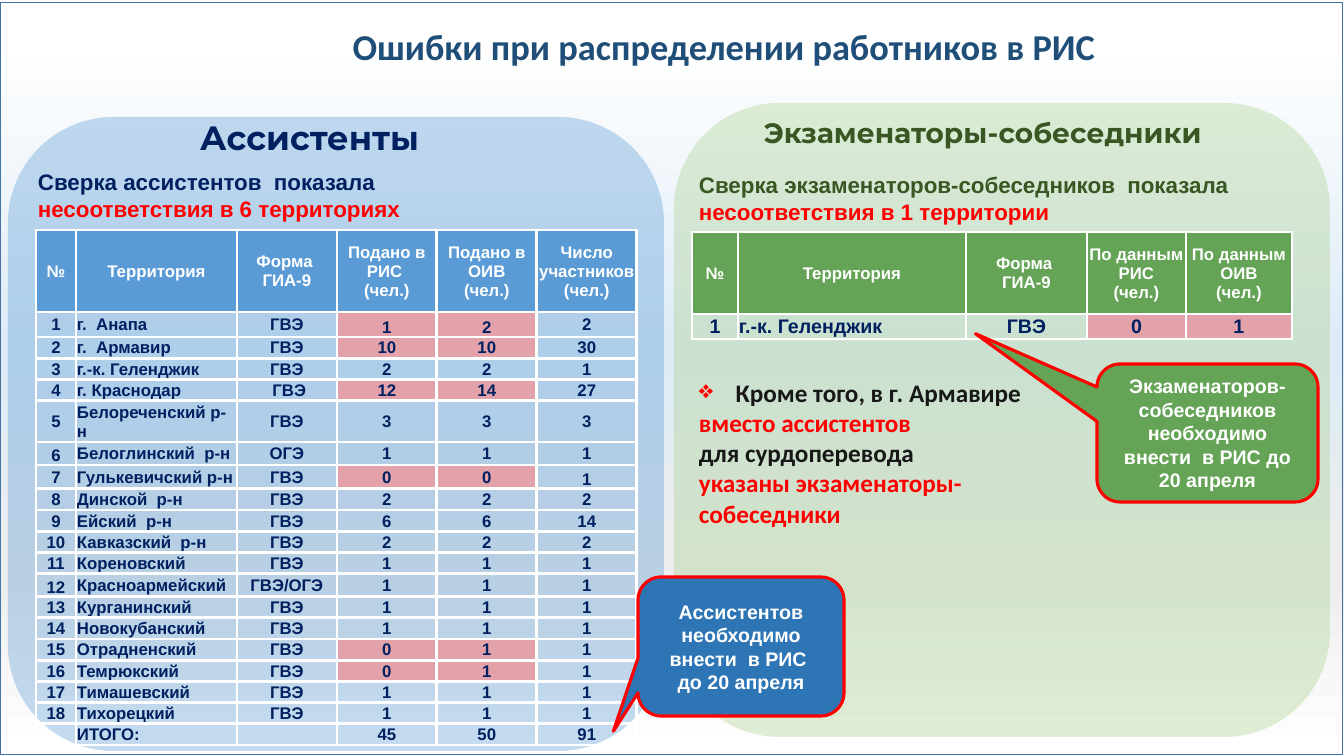
from lxml import etree
from pptx import Presentation
from pptx.dml.color import RGBColor
from pptx.enum.shapes import MSO_SHAPE
from pptx.enum.text import MSO_ANCHOR, PP_ALIGN
from pptx.oxml.ns import qn
from pptx.util import Emu, Pt

RECT, ROUND = MSO_SHAPE.RECTANGLE, MSO_SHAPE.ROUNDED_RECTANGLE
CALLOUT = MSO_SHAPE.ROUNDED_RECTANGULAR_CALLOUT
TOP, MIDDLE, BOTTOM = MSO_ANCHOR.TOP, MSO_ANCHOR.MIDDLE, MSO_ANCHOR.BOTTOM
LEFT, CENTER = PP_ALIGN.LEFT, PP_ALIGN.CENTER

WHITE = RGBColor(0xFF, 0xFF, 0xFF)
RED = RGBColor(0xFF, 0x00, 0x00)
PINK = RGBColor(0xE3, 0xA1, 0xA9)
NAVY = RGBColor(0x00, 0x20, 0x60)
TITLE_BLUE = RGBColor(0x1F, 0x4E, 0x79)
FRAME_BLUE = RGBColor(0x43, 0x73, 0x9E)
SKY = RGBColor(0x5B, 0x9B, 0xD5)
BLUE = RGBColor(0x2E, 0x75, 0xB6)
PALE_BLUE = RGBColor(0xDE, 0xEB, 0xF6)
PALE_GRAY = RGBColor(0xED, 0xED, 0xED)
LIGHT_GREEN = RGBColor(0xA9, 0xD1, 0x8E)
GREEN = RGBColor(0x65, 0xA4, 0x56)
DARK_GREEN = RGBColor(0x38, 0x57, 0x23)
BLACK = RGBColor(0x18, 0x17, 0x17)

BACKDROP = [(5, WHITE), (46, PALE_BLUE), (76, PALE_GRAY), (100, WHITE)]

ASSISTANTS = [
    ("№", "Территория", "Форма \nГИА-9", "Подано в РИС \n(чел.)", "Подано в ОИВ\n(чел.)",
     "Число участников\n(чел.)"),
    ("1", "г.  Анапа", "ГВЭ", "1", "2", "2"),
    ("2", "г.  Армавир", "ГВЭ", "10", "10", "30"),
    ("3", "г.-к. Геленджик", "ГВЭ", "2", "2", "1"),
    ("4", "г. Краснодар", " ГВЭ", "12", "14", "27"),
    ("5", "Белореченский р-н", "ГВЭ", "3", "3", "3"),
    ("6", "Белоглинский  р-н", "ОГЭ", "1", "1", "1"),
    ("7", "Гулькевичский р-н", "ГВЭ", "0", "0", "1"),
    ("8", "Динской  р-н", "ГВЭ", "2", "2", "2"),
    ("9", "Ейский  р-н", "ГВЭ", "6", "6", "14"),
    ("10", "Кавказский  р-н", "ГВЭ", "2", "2", "2"),
    ("11", "Кореновский", "ГВЭ", "1", "1", "1"),
    ("12", "Красноармейский", "ГВЭ/ОГЭ", "1", "1", "1"),
    ("13", "Курганинский", "ГВЭ", "1", "1", "1"),
    ("14", "Новокубанский", "ГВЭ", "1", "1", "1"),
    ("15", "Отрадненский", "ГВЭ", "0", "1", "1"),
    ("16", "Темрюкский", "ГВЭ", "0", "1", "1"),
    ("17", "Тимашевский", "ГВЭ", "1", "1", "1"),
    ("18", "Тихорецкий", "ГВЭ", "1", "1", "1"),
    ("", "ИТОГО:", "", "45", "50", "91"),
]
ASSISTANT_ROWS = [82, 25] + [21] * 4 + [23, 24] + [21] * 4 + [23] + [21] * 7
EXAMINERS = [
    ("№", "Территория", "Форма \nГИА-9", "По данным  РИС \n(чел.)", "По данным ОИВ\n(чел.)"),
    ("1", "г.-к. Геленджик", "ГВЭ", "0", "1"),
]
RESULT_COLUMNS = (3, 4)


def px(n):
    return Emu(round(n * 914400 / 100.8))


class Board:
    """Draws styled elements on one slide, with lengths in px."""

    def __init__(self, prs):
        self.s = prs.slides.add_slide(prs.slide_layouts[6])
        self.font = "Arial"

    def sub(self, parent, tag, **attrs):
        return etree.SubElement(parent, qn(tag), attrs)

    def backdrop(self, stops):
        fill = self.s.background.fill
        fill.gradient()
        fill.gradient_angle = 270
        gs_lst = next(self.s.element.iter(qn("a:gsLst")))
        for gs in list(gs_lst):
            gs_lst.remove(gs)
        for pos, color in stops:
            gs = self.sub(gs_lst, "a:gs", pos=str(pos * 1000))
            self.sub(gs, "a:srgbClr", val=str(color))

    def style(self, p, size, color, font=None, align=LEFT):
        p.alignment = align
        p.font.size, p.font.bold, p.font.name = Pt(size), True, font or self.font
        p.font.color.rgb = color

    def put_text(self, tf, paras, size, font=None, align=LEFT, bullet=None):
        for i, runs in enumerate(paras):
            p = tf.paragraphs[0] if i == 0 else tf.add_paragraph()
            if bullet and i == 0:
                ppr = p._p.get_or_add_pPr()
                ppr.set("marL", str(px(31)))
                ppr.set("indent", str(px(-31)))
                self.sub(ppr, "a:buChar", char=bullet)
            self.style(p, size, runs[0][1], font, align)
            for text, color in runs:
                r = p.add_run()
                r.text = text
                if len(runs) > 1:
                    r.font.color.rgb = color

    def shape(self, kind, x, y, w, h, fill=None, alpha=None, line=None, weight=0):
        sp = self.s.shapes.add_shape(kind, px(x), px(y), px(w), px(h))
        sp.shadow.inherit = False
        if fill is None:
            sp.fill.background()
        else:
            sp.fill.solid()
            sp.fill.fore_color.rgb = fill
        if alpha:
            clr = next(sp.element.spPr.iter(qn("a:srgbClr")))
            self.sub(clr, "a:alpha", val=str(alpha * 1000))
        if line is None:
            sp.line.fill.background()
        else:
            sp.line.color.rgb = line
            sp.line.width = Pt(weight)
        return sp

    def callout(self, x, y, w, h, fill, tip, lines):
        sp = self.shape(CALLOUT, x, y, w, h, fill, line=RED, weight=2.25)
        sp.adjustments[0], sp.adjustments[1] = tip
        tf = sp.text_frame
        tf.word_wrap, tf.vertical_anchor = True, MIDDLE
        self.put_text(tf, [[(text, WHITE)] for text in lines], 14, align=CENTER)

    def text(self, x, y, w, h, paras, size, wrap=True, anchor=TOP, **style):
        tf = self.s.shapes.add_textbox(px(x), px(y), px(w), px(h)).text_frame
        tf.word_wrap, tf.vertical_anchor = wrap, anchor
        self.put_text(tf, paras, size, **style)

    def border(self, cell, weight):
        tcpr = cell._tc.get_or_add_tcPr()
        for side in ("a:lnL", "a:lnR", "a:lnT", "a:lnB"):
            ln = self.sub(tcpr, side, w=str(Pt(weight)))
            self.sub(self.sub(ln, "a:solidFill"), "a:srgbClr", val=str(WHITE))

    def table(self, x, y, cols, rows, data, head, weight, size, marked, low=()):
        frame = self.s.shapes.add_table(len(rows), len(cols), px(x), px(y),
                                        px(sum(cols)), px(sum(rows)))
        tbl = frame.table
        tbl.first_row = tbl.horz_banding = False
        for column, w in zip(tbl.columns, cols):
            column.width = px(w)
        for i, h in enumerate(rows):
            tbl.rows[i].height = px(h)
            for j, text in enumerate(data[i]):
                cell = tbl.cell(i, j)
                cell.margin_left = cell.margin_right = cell.margin_top = px(1)
                cell.margin_bottom = 0
                cell.vertical_anchor = BOTTOM if (i, j) in low else MIDDLE
                self.border(cell, weight)
                fill = head if i == 0 else PINK if i in marked and j in RESULT_COLUMNS else None
                if fill is None:
                    cell.fill.background()
                else:
                    cell.fill.solid()
                    cell.fill.fore_color.rgb = fill
                cell.text = text
                for p in cell.text_frame.paragraphs:
                    self.style(p, size if i else 12, NAVY if i else WHITE,
                               align=LEFT if i and j == 1 else CENTER)
                    if not text:
                        self.sub(p._p, "a:endParaRPr", sz=str(size * 100))


def main():
    prs = Presentation()
    prs.slide_width, prs.slide_height = px(1344), px(756)
    b = Board(prs)
    b.backdrop(BACKDROP)
    b.shape(RECT, 0, 2, 1342, 752, line=FRAME_BLUE, weight=0.25)
    b.shape(ROUND, 674, 103, 656, 634, LIGHT_GREEN, alpha=36)
    b.shape(ROUND, 8, 117, 656, 634, SKY, alpha=36)
    b.text(132, 0, 1185, 92, [[("Ошибки при распределении работников в РИС", TITLE_BLUE)]],
           26, anchor=MIDDLE, font="Calibri", align=CENTER)
    b.text(28, 163, 413, 65, [[("Сверка ассистентов  показала", NAVY)],
                              [("несоответствия в 6 территориях", RED)]], 16, wrap=False)
    b.table(36, 230, [40, 161, 100, 100, 100, 100], ASSISTANT_ROWS, ASSISTANTS, SKY, 2.25, 12,
            marked=(1, 2, 4, 7, 15, 16), low=((1, 3), (1, 4), (6, 0), (7, 5), (12, 0)))
    b.callout(638, 577, 206, 139, BLUE, (-0.62, 0.61),
              ["Ассистентов необходимо внести  в РИС ", "до 20 апреля"])
    b.text(689, 166, 607, 65, [[("Сверка экзаменаторов-собеседников  показала ", DARK_GREEN),
                                ("несоответствия в 1 территории", RED)]], 16)
    b.table(692, 232, [46, 228, 121, 99, 106], [82, 25], EXAMINERS, GREEN, 1, 14, marked=(1,))
    b.callout(1097, 364, 221, 138, GREEN, (-1.05, -0.72),
              ["Экзаменаторов-собеседников необходимо внести  в РИС до 20 апреля"])
    b.text(190, 112, 251, 50, [[("Ассистенты", NAVY)]], 24, wrap=False, font="Montserrat")
    b.text(754, 111, 497, 44, [[("Экзаменаторы-собеседники", DARK_GREEN)]], 20, wrap=False,
           font="Montserrat")
    b.text(689, 372, 422, 163, [[(" ", RED), ("Кроме того, в г. Армавире", BLACK)],
                                [("вместо ассистентов", RED)],
                                [("для сурдоперевода", BLACK)],
                                [("указаны экзаменаторы-собеседники", RED)]],
           18, font="Calibri", bullet="❖")
    prs.save("out.pptx")


if __name__ == "__main__":
    main()
